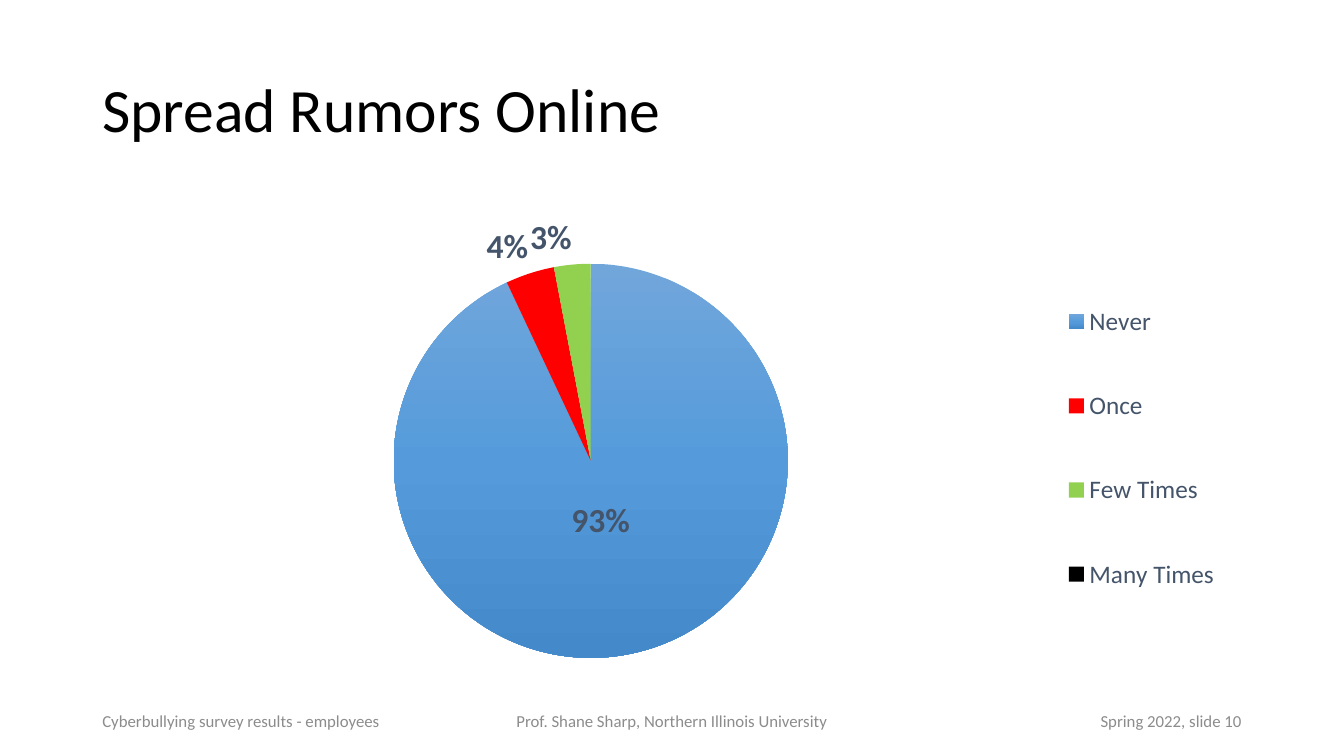
from copy import deepcopy
from dataclasses import dataclass

from lxml import etree
from pptx import Presentation
from pptx import util as u
from pptx.chart import data as chart_data
from pptx.dml.color import RGBColor
from pptx.enum import chart as ch, text
from pptx.oxml import ns

PX = 9525
FONT = "Calibri"
COLORS = {
    "title": "000000",
    "footer": "8C8C8C",
    "label": "44546A",
    "Once": "FF0000",
    "Few Times": "92D050",
    "Many Times": "000000",
}
NEVER_GRADIENT = {0: "71A6DB", 0.5: "559BDB", 1: "448ACA"}
ANSWERS = {"Never": 93, "Once": 4, "Few Times": 3, "Many Times": 0}


@dataclass(frozen=True)
class Box:
    left: int
    top: int
    width: int
    height: int

    def emu(self) -> tuple[int, int, int, int]:
        return self.left * PX, self.top * PX, self.width * PX, self.height * PX


@dataclass(frozen=True)
class Label:
    words: str
    box: Box
    size: int
    color: str
    align: text.PP_ALIGN = text.PP_ALIGN.LEFT
    spacing: float = 1.0


LEFT, CENTER, RIGHT = text.PP_ALIGN.LEFT, text.PP_ALIGN.CENTER, text.PP_ALIGN.RIGHT
LABELS = [
    Label("Spread Rumors Online", Box(88, 38, 1104, 139), 44, "title", LEFT, 0.9),
    Label("Prof. Shane Sharp, Northern Illinois University",
          Box(424, 667, 432, 38), 12, "footer", CENTER),
    Label("Cyberbullying survey results - employees",
          Box(88, 667, 288, 38), 12, "footer", LEFT),
    Label("Spring 2022, slide 10", Box(904, 667, 288, 38), 12, "footer", RIGHT),
]
CHART_BOX = Box(88, 192, 1104, 489)


def rgb(name: str) -> RGBColor:
    return RGBColor.from_string(COLORS[name])


def set_font(font, size: int, color: str, bold: bool = False) -> None:
    font.name = FONT
    font.size = u.Pt(size)
    font.bold = bold
    font.color.rgb = rgb(color)


def add_label(s, label: Label) -> None:
    tf = s.shapes.add_textbox(*label.box.emu()).text_frame
    tf.word_wrap = True
    tf.vertical_anchor = text.MSO_ANCHOR.MIDDLE
    p = tf.paragraphs[0]
    p.alignment = label.align
    p.line_spacing = label.spacing
    r = p.add_run()
    r.text = label.words
    set_font(r.font, label.size, label.color)


def set_layout(parent, index: int, **values: float | str) -> None:
    for old in parent.findall(ns.qn("c:layout")):
        parent.remove(old)
    layout = etree.Element(ns.qn("c:layout"))
    manual = etree.SubElement(layout, ns.qn("c:manualLayout"))
    for tag, value in values.items():
        etree.SubElement(manual, ns.qn(f"c:{tag}"), val=str(value))
    parent.insert(index, layout)


def fill_gradient(fill) -> None:
    fill.gradient()
    fill.gradient_angle = 270
    stops = fill._fill._gradFill.find(ns.qn("a:gsLst"))
    stops.append(deepcopy(stops[0]))
    for stop, (position, color) in zip(fill.gradient_stops, NEVER_GRADIENT.items()):
        stop.position = position
        stop.color.rgb = RGBColor.from_string(color)


def label_slices(series) -> None:
    labels = series.data_labels
    labels.show_value = False
    labels.show_percentage = True
    labels.number_format = "0%"
    labels.number_format_is_linked = False
    labels.position = ch.XL_LABEL_POSITION.OUTSIDE_END
    set_font(labels.font, 24, "label", True)

    never = series.points[0].data_label
    never.position = ch.XL_LABEL_POSITION.CENTER
    set_font(never.font, 24, "label", True)
    group = labels._element
    d_lbl = group.find(ns.qn("c:dLbl"))
    d_lbl.find(ns.qn("c:showVal")).set("val", "0")
    d_lbl.find(ns.qn("c:showPercent")).set("val", "1")
    set_layout(d_lbl, 1, x=-0.01, y=-0.07)

    hidden = etree.Element(ns.qn("c:dLbl"))
    etree.SubElement(hidden, ns.qn("c:idx"), val=str(len(ANSWERS) - 1))
    etree.SubElement(hidden, ns.qn("c:delete"), val="1")
    d_lbl.addnext(hidden)


def add_pie(s) -> None:
    data = chart_data.CategoryChartData()
    data.categories = list(ANSWERS)
    data.add_series("Series 1", list(ANSWERS.values()))
    chart = s.shapes.add_chart(ch.XL_CHART_TYPE.PIE, *CHART_BOX.emu(), data).chart
    chart.has_title = False
    set_font(chart.font, 10, "title")
    plot = chart.plots[0]
    plot.vary_by_categories = True
    series = plot.series[0]
    for i, answer in enumerate(ANSWERS):
        fill = series.points[i].format.fill
        if answer in COLORS:
            fill.solid()
            fill.fore_color.rgb = rgb(answer)
        else:
            fill_gradient(fill)
    label_slices(series)

    chart.has_legend = True
    legend = chart.legend
    legend.position = ch.XL_LEGEND_POSITION.RIGHT
    legend.include_in_layout = False
    set_font(legend.font, 18, "label")
    set_layout(legend._element, 1, xMode="edge", yMode="edge",
               x=0.83, y=0.1, w=0.15, h=0.76)
    plot_area = chart._chartSpace.chart.plotArea
    set_layout(plot_area, 0, layoutTarget="inner", xMode="edge", yMode="edge",
               x=0.26, y=0.12, w=0.34, h=0.77)


def main() -> None:
    prs = Presentation()
    prs.slide_width, prs.slide_height = 1280 * PX, 720 * PX
    s = prs.slides.add_slide(prs.slide_layouts[6])
    add_pie(s)
    for label in LABELS:
        add_label(s, label)
    prs.save("out.pptx")


if __name__ == "__main__":
    main()
